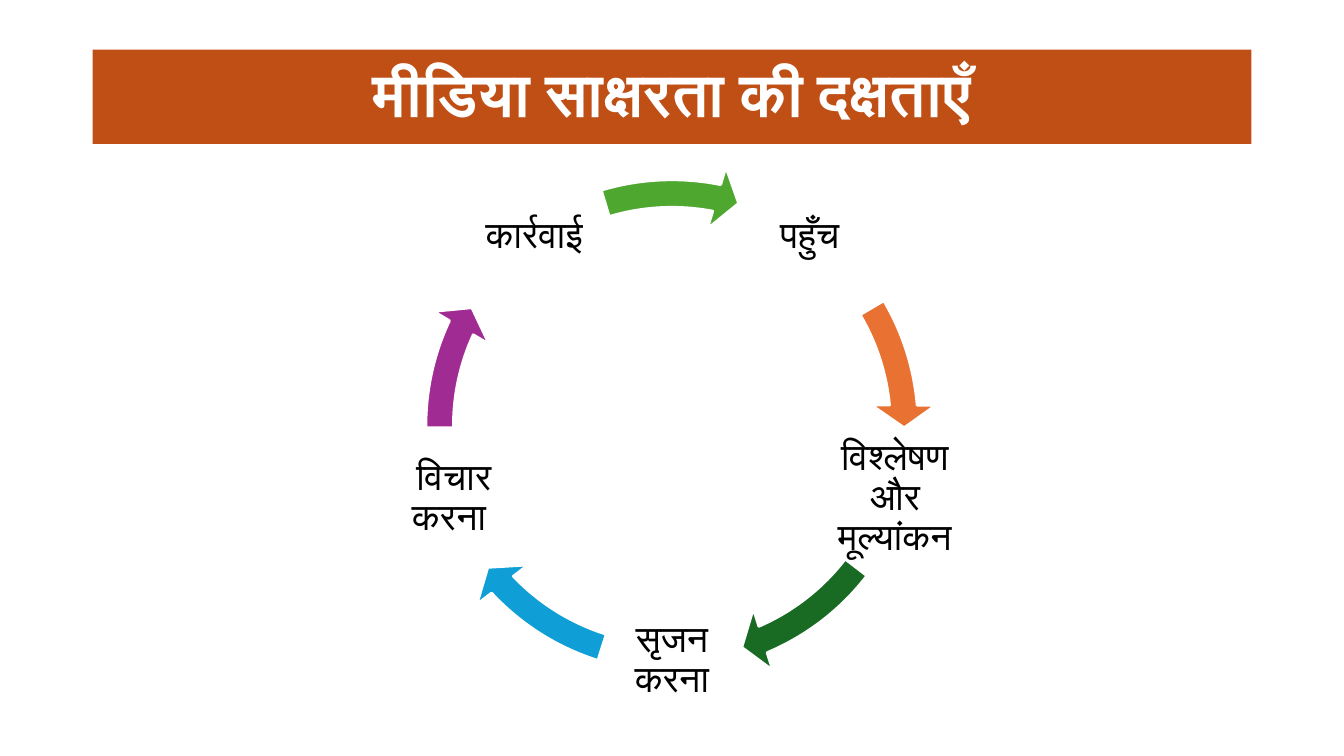
"""Build a slide showing the five media literacy competencies as a cycle."""
from dataclasses import dataclass
from math import cos, radians, sin

from pptx import Presentation
from pptx.dml.color import RGBColor
from pptx.enum.shapes import MSO_SHAPE as Shape
from pptx.enum.text import MSO_ANCHOR as Anchor, MSO_AUTO_SIZE as AutoSize, PP_ALIGN as Align
from pptx.oxml.ns import qn
from pptx.slide import Slide
from pptx.text.text import TextFrame
from pptx.util import Cm, Pt

WHITE = RGBColor(0xFF, 0xFF, 0xFF)
BLACK = RGBColor(0x00, 0x00, 0x00)
RUST = RGBColor(0xC0, 0x4F, 0x15)
ORANGE = RGBColor(0xE9, 0x71, 0x32)
DARK_GREEN = RGBColor(0x19, 0x6B, 0x24)
BLUE = RGBColor(0x0F, 0x9E, 0xD5)
PURPLE = RGBColor(0xA0, 0x2B, 0x93)
GREEN = RGBColor(0x4E, 0xA7, 0x2E)

FONT = "Lato"
CENTER_X, CENTER_Y = 12.7, 8.05
LABEL_RADIUS, LABEL_SIZE = 4.43, 2.67
ARROW_SIZE = 10
FIRST_ANGLE = -54
DEGREE = 0.6


@dataclass(frozen=True)
class Step:
    label: str
    color: RGBColor
    arrow_start: float
    arrow_end: float


STEPS = [
    Step("पहुँच", ORANGE, 329.44, 354.89),
    Step("विश्लेषण और मूल्यांकन", DARK_GREEN, 37.56, 66.91),
    Step("सृजन करना", BLUE, 107.49, 136.85),
    Step(" विचार करना", PURPLE, 179.51, 204.97),
    Step("कार्रवाई", GREEN, 253.31, 281.1),
]


def write_text(frame: TextFrame, text: str, size: float, color: RGBColor, bold: bool) -> None:
    """Write one centred run into a text frame."""
    frame.word_wrap = True
    frame.auto_size = AutoSize.NONE
    frame.vertical_anchor = Anchor.MIDDLE
    paragraph = frame.paragraphs[0]
    paragraph.alignment = Align.CENTER
    paragraph.line_spacing = 0.9
    run = paragraph.add_run()
    run.text = text
    font = run.font
    font.name, font.size, font.bold = FONT, Pt(size), bold
    font.color.rgb = color
    complex_font = font._element.makeelement(qn("a:cs"), {"typeface": FONT})
    font._element.append(complex_font)


def add_title(slide: Slide, text: str) -> None:
    """Place the title in its coloured band."""
    title = slide.shapes.title
    title.left, title.top, title.width, title.height = Cm(1.75), Cm(0.94), Cm(21.9), Cm(1.78)
    title.fill.solid()
    title.fill.fore_color.rgb = RUST
    write_text(title.text_frame, text, 32.4, WHITE, True)


def add_label(slide: Slide, text: str, angle: float) -> None:
    """Add a label centred on the circle at the given angle."""
    left = CENTER_X + LABEL_RADIUS * cos(radians(angle)) - LABEL_SIZE / 2
    top = CENTER_Y + LABEL_RADIUS * sin(radians(angle)) - LABEL_SIZE / 2
    box = slide.shapes.add_textbox(Cm(left), Cm(top), Cm(LABEL_SIZE), Cm(LABEL_SIZE))
    frame = box.text_frame
    frame.margin_left = frame.margin_right = frame.margin_top = frame.margin_bottom = Cm(0.07)
    write_text(frame, text, 20, BLACK, False)
    frame.paragraphs[0].space_after = Pt(7)


def add_arrow(slide: Slide, step: Step) -> None:
    """Add the curved arrow that leads to the next step."""
    arrow = slide.shapes.add_shape(
        Shape.CIRCULAR_ARROW,
        Cm(CENTER_X - ARROW_SIZE / 2), Cm(CENTER_Y - ARROW_SIZE / 2),
        Cm(ARROW_SIZE), Cm(ARROW_SIZE),
    )
    values = (0.052, 5.6 * DEGREE, step.arrow_end * DEGREE, step.arrow_start * DEGREE, 0.061)
    for index, value in enumerate(values):
        arrow.adjustments[index] = value
    arrow.shadow.inherit = False
    arrow.fill.solid()
    arrow.fill.fore_color.rgb = step.color
    arrow.line.color.rgb = WHITE
    arrow.line.width = Pt(1.5)


def main() -> None:
    """Create and save the presentation."""
    presentation = Presentation()
    presentation.slide_width, presentation.slide_height = Cm(25.4), Cm(14.29)
    slide = presentation.slides.add_slide(presentation.slide_layouts[5])
    add_title(slide, "मीडिया साक्षरता की दक्षताएँ")
    for index, step in enumerate(STEPS):
        add_label(slide, step.label, FIRST_ANGLE + index * 360 / len(STEPS))
        add_arrow(slide, step)
    presentation.save("out.pptx")


if __name__ == "__main__":
    main()
